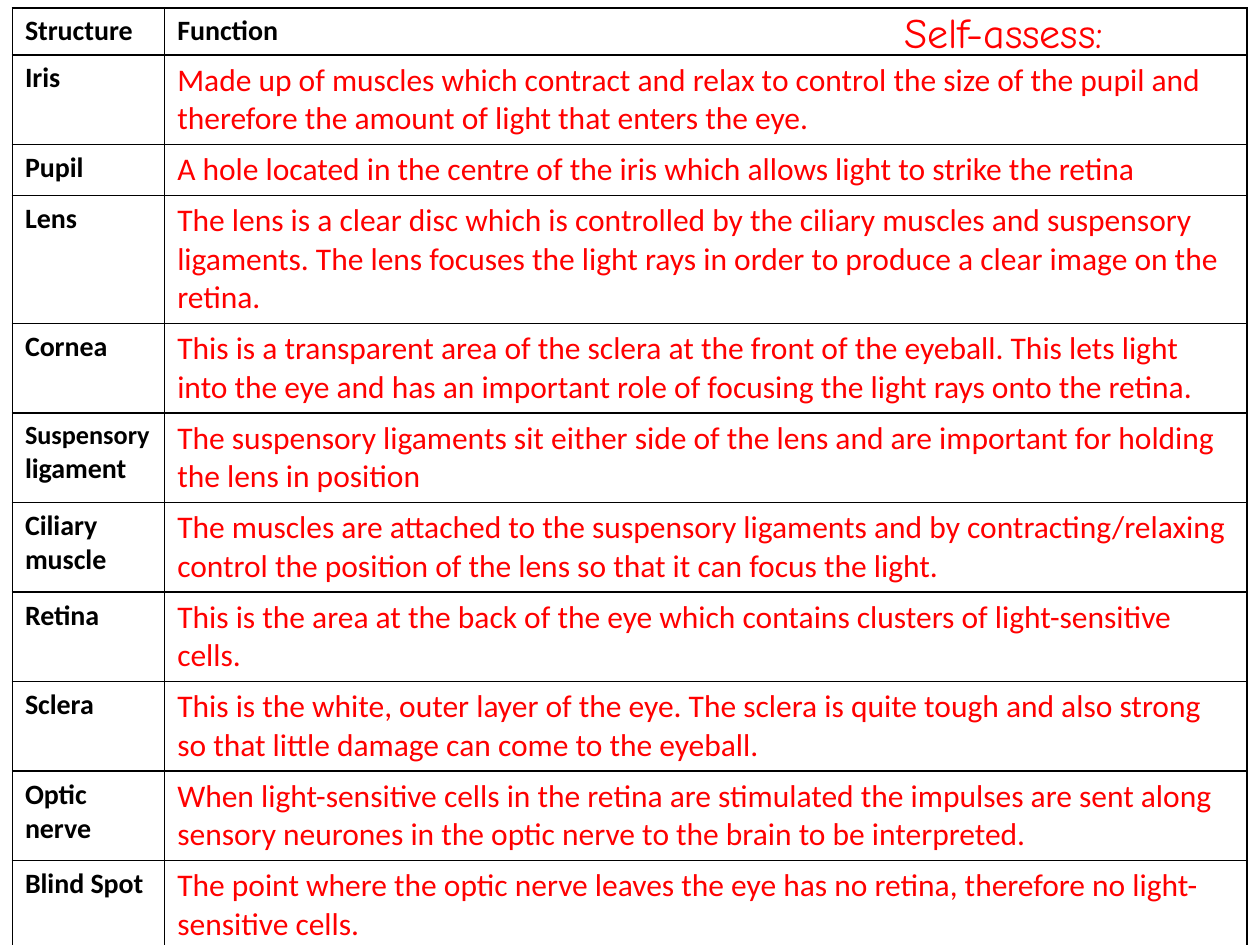
import pptx
import pptx.dml.color
import pptx.enum.text
import pptx.oxml
import pptx.oxml.ns
import pptx.util
from pptx.util import Cm

COLOURS = {"heading": "000000", "answer": "FF0000", "border": "000000"}

HEADINGS = ("Structure", "Function")
EYE_PARTS = [
    ("Iris", "Made up of muscles which contract and relax to control the size of the pupil "
             "and therefore the amount of light that enters the eye."),
    ("Pupil", "A hole located in the centre of the iris which allows light to strike the retina"),
    ("Lens", "The lens is a clear disc which is controlled by the ciliary muscles and suspensory "
             "ligaments. The lens focuses the light rays in order to produce a clear image on "
             "the retina."),
    ("Cornea", "This is a transparent area of the sclera at the front of the eyeball. This lets "
               "light into the eye and has an important role of focusing the light rays onto "
               "the retina."),
    ("Suspensory ligament", "The suspensory ligaments sit either side of the lens and are "
                            "important for holding the lens in position"),
    ("Ciliary muscle", "The muscles are attached to the suspensory ligaments and by "
                       "contracting/relaxing control the position of the lens so that it can "
                       "focus the light."),
    ("Retina", "This is the area at the back of the eye which contains clusters of "
               "light-sensitive cells."),
    ("Sclera", "This is the white, outer layer of the eye. The sclera is quite tough and also "
               "strong so that little damage can come to the eyeball."),
    ("Optic nerve", "When light-sensitive cells in the retina are stimulated the impulses are "
                    "sent along sensory neurones in the optic nerve to the brain to be "
                    "interpreted."),
    ("Blind Spot", "The point where the optic nerve leaves the eye has no retina, therefore no "
                   "light-sensitive cells."),
]
COLUMN_WIDTHS = (3.07, 21.82)
ONE_LINE, TWO_LINES, THREE_LINES = 0.94, 1.63, 2.34
ROW_HEIGHTS = [ONE_LINE, TWO_LINES, ONE_LINE, THREE_LINES] + [TWO_LINES] * 7


def set_font(font, name, size, colour, bold=False):
    font.name = name
    font.size = pptx.util.Pt(size)
    font.bold = bold
    font.color.rgb = pptx.dml.color.RGBColor.from_string(COLOURS[colour])


def add_borders(cell):
    properties = cell._tc.get_or_add_tcPr()
    for side in ("lnL", "lnR", "lnT", "lnB"):
        properties.append(pptx.oxml.parse_xml(
            f'<a:{side} {pptx.oxml.ns.nsdecls("a")} w="12700"><a:solidFill>'
            f'<a:srgbClr val="{COLOURS["border"]}"/></a:solidFill></a:{side}>'))


def fill_cell(cell, text, is_answer):
    add_borders(cell)
    cell.fill.background()
    paragraph = cell.text_frame.paragraphs[0]
    if is_answer:
        set_font(paragraph.font, "Calibri", 18, "answer")
    else:
        set_font(paragraph.font, "Calibri", 16, "heading", bold=True)
    # The longest word is a little smaller so that it fits the narrow column.
    before, long_word, after = text.partition("Suspensory ")
    if long_word and not is_answer:
        paragraph.add_run().text = long_word
        paragraph.runs[0].font.size = pptx.util.Pt(15)
    else:
        after = text
    paragraph.add_run().text = after


def add_eye_table(slide):
    rows = [HEADINGS] + EYE_PARTS
    table = slide.shapes.add_table(
        len(rows), len(HEADINGS), Cm(0.25), Cm(0.16),
        Cm(sum(COLUMN_WIDTHS)), Cm(sum(ROW_HEIGHTS))).table
    table.first_row = table.horz_banding = False
    for column, width in zip(table.columns, COLUMN_WIDTHS):
        column.width = Cm(width)
    for row, height in zip(table.rows, ROW_HEIGHTS):
        row.height = Cm(height)
    for r, texts in enumerate(rows):
        for c, text in enumerate(texts):
            fill_cell(table.cell(r, c), text, is_answer=r > 0 and c == 1)


def add_label(slide, text):
    frame = slide.shapes.add_textbox(Cm(17.98), Cm(0), Cm(7.42), Cm(1.28)).text_frame
    frame.word_wrap = True
    frame.auto_size = pptx.enum.text.MSO_AUTO_SIZE.SHAPE_TO_FIT_TEXT
    frame.text = text
    set_font(frame.paragraphs[0].font, "Comic Neue", 24, "answer")


def main():
    presentation = pptx.Presentation()
    presentation.slide_width, presentation.slide_height = Cm(25.4), Cm(19.05)
    slide = presentation.slides.add_slide(presentation.slide_layouts[6])
    add_eye_table(slide)
    add_label(slide, "Self-assess:")
    presentation.save("out.pptx")


if __name__ == "__main__":
    main()
